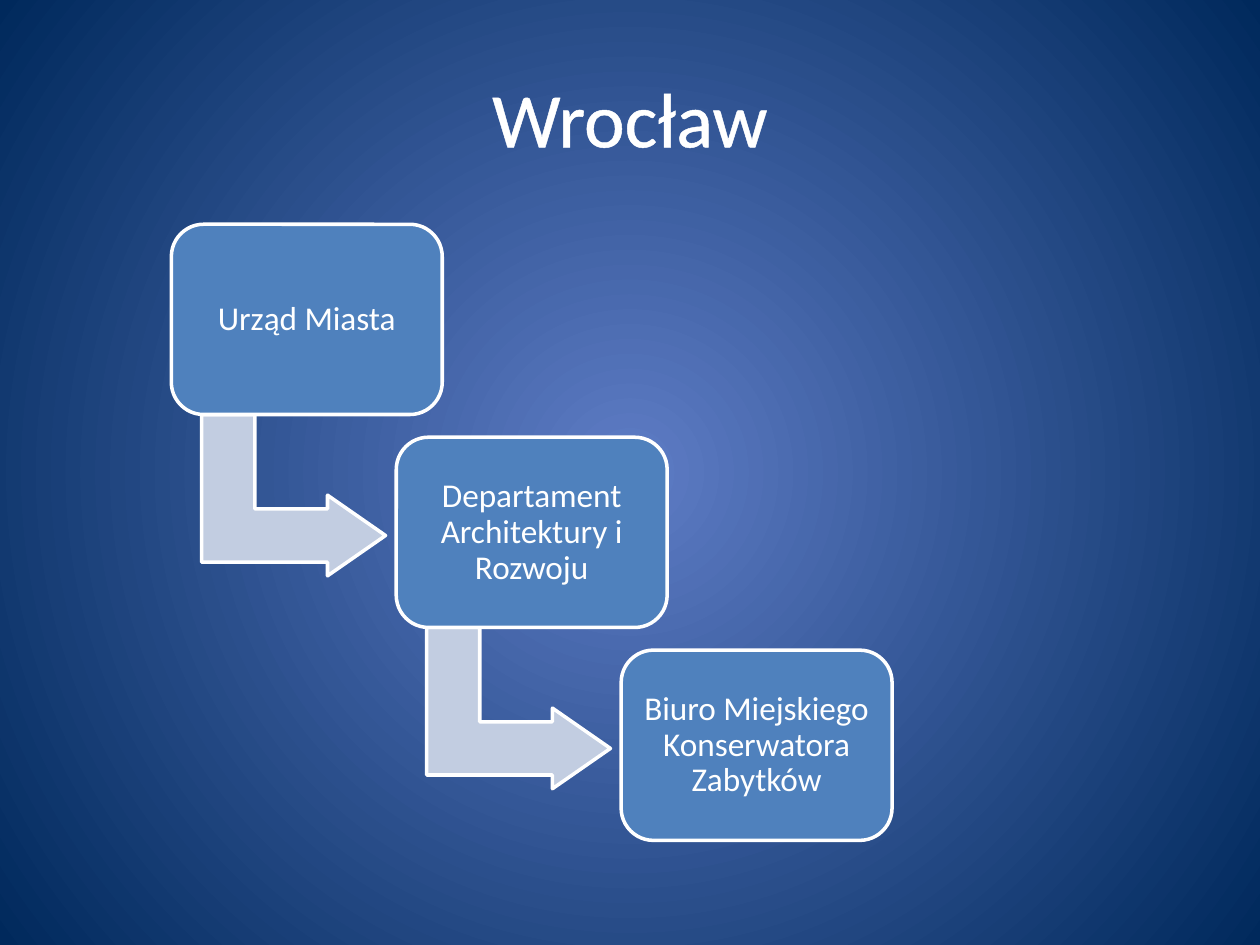
from lxml import etree
from pptx import Presentation
from pptx.dml.color import RGBColor
from pptx.enum.shapes import MSO_SHAPE as SHAPE
from pptx.enum.text import MSO_ANCHOR as ANCHOR, PP_ALIGN as ALIGN
from pptx.oxml import parse_xml
from pptx.oxml.ns import nsdecls, qn
from pptx.util import Inches, Pt

WHITE = RGBColor(0xFF, 0xFF, 0xFF)
BLUE = RGBColor(0x4F, 0x81, 0xBD)
PALE = RGBColor(0xC2, 0xCD, 0xE1)
GLOW = RGBColor(0x5E, 0x7C, 0xC5)
NAVY = RGBColor(0x00, 0x29, 0x5C)

STEPS = [
    "Urząd Miasta",
    "Departament Architektury i Rozwoju",
    "Biuro Miejskiego Konserwatora Zabytków",
]
BOX_X, BOX_Y, BOX_W, BOX_H = 1.36, 1.78, 2.15, 1.51
ARROW_X, ARROW_Y, ARROW_W, ARROW_H = 1.69, 3.2, 1.28, 1.46
STEP_X, STEP_Y = 1.785, 1.69


def add_block(s, kind, x, y, w, h, color, adjustments):
    sp = s.shapes.add_shape(kind, Inches(x), Inches(y), Inches(w), Inches(h))
    sp.shadow.inherit = False
    sp.fill.solid()
    sp.fill.fore_color.rgb = color
    sp.line.color.rgb = WHITE
    sp.line.width = Pt(2)
    for i, value in enumerate(adjustments):
        sp.adjustments[i] = value
    return sp


def format_paragraph(p, size):
    p.alignment = ALIGN.CENTER
    p.font.size = Pt(size)
    p.font.name = "Calibri"
    p.font.color.rgb = WHITE


prs = Presentation()
prs.slide_width = Inches(10)
prs.slide_height = Inches(7.5)
s = prs.slides.add_slide(prs.slide_layouts[5])

fill = s.background.fill
fill.gradient()
for stop, color, position in zip(fill.gradient_stops, (GLOW, NAVY), (0, 1)):
    stop.color.rgb = color
    stop.position = position
grad = s.background._cSld.find(".//" + qn("a:gradFill"))
grad.remove(grad.find(qn("a:lin")))
radial = etree.SubElement(grad, qn("a:path"), {"path": "circle"})
etree.SubElement(radial, qn("a:fillToRect"), {side: "50000" for side in "ltrb"})

title = s.shapes.title
title.left, title.top = Inches(0.5), Inches(0.3)
title.width, title.height = Inches(9), Inches(1.25)
tf = title.text_frame
tf.text = "Wrocław"
tf.vertical_anchor = ANCHOR.MIDDLE
p = tf.paragraphs[0]
format_paragraph(p, 44)
outline = parse_xml(
    f'<a:ln {nsdecls("a")} w="{Pt(1.45)}"><a:solidFill>'
    f'<a:srgbClr val="{WHITE}"/></a:solidFill></a:ln>'
)
p.runs[0].font._element.insert(0, outline)

for i, step in enumerate(STEPS):
    dx, dy = i * STEP_X, i * STEP_Y
    if i < len(STEPS) - 1:
        arrow = add_block(s, SHAPE.BENT_UP_ARROW, ARROW_X + dx, ARROW_Y + dy,
                          ARROW_W, ARROW_H, PALE, (0.33, 0.25, 0.36))
        arrow.rotation = 90
    box = add_block(s, SHAPE.ROUNDED_RECTANGLE, BOX_X + dx, BOX_Y + dy,
                    BOX_W, BOX_H, BLUE, (0.17,))
    tf = box.text_frame
    tf.word_wrap = True
    tf.vertical_anchor = ANCHOR.MIDDLE
    tf.margin_left = tf.margin_right = Inches(0.08)
    tf.margin_top = tf.margin_bottom = Inches(0.08)
    tf.text = step
    p = tf.paragraphs[0]
    p.line_spacing = 0.9
    format_paragraph(p, 19)

prs.save("out.pptx")
